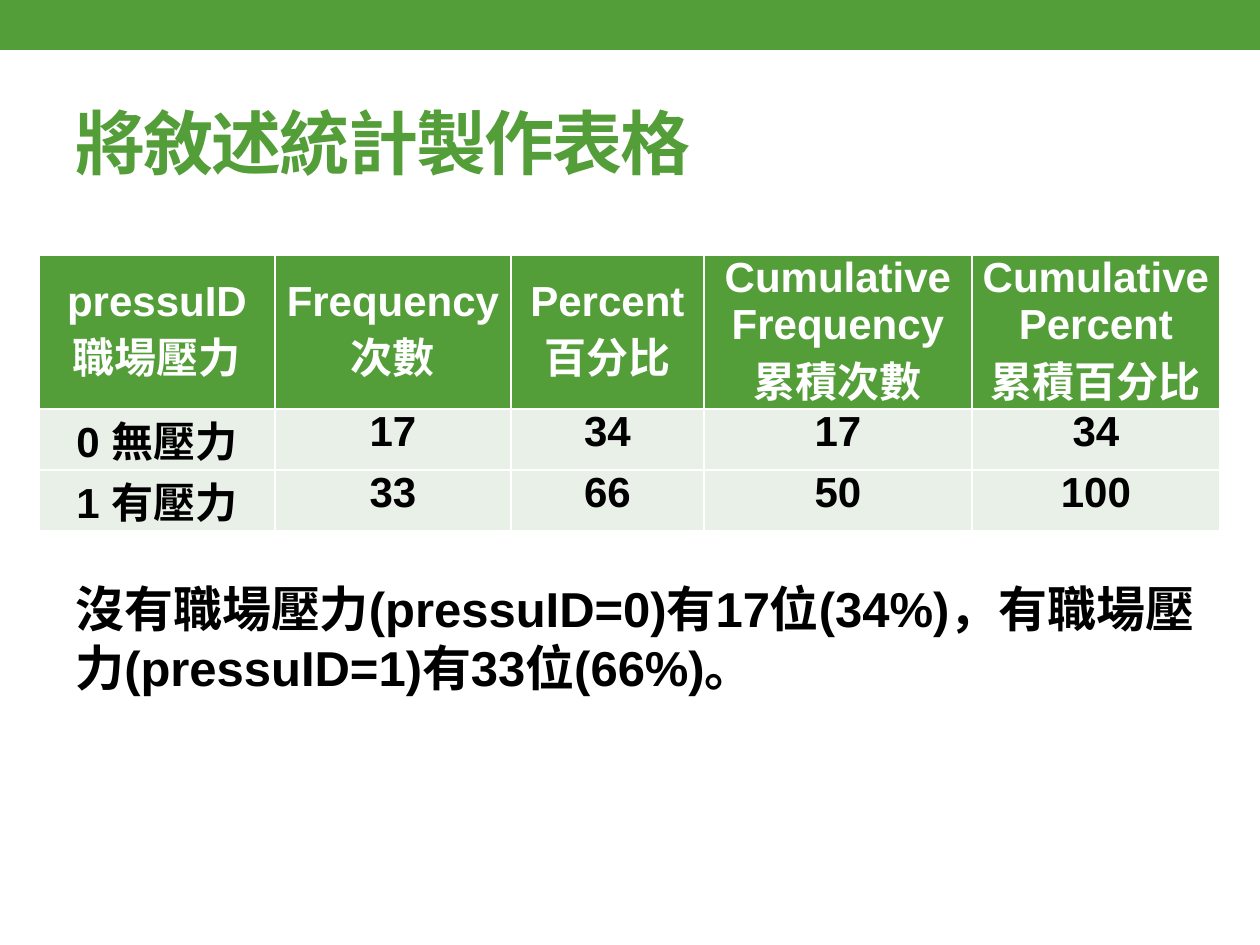
from lxml import etree
from pptx import Presentation
from pptx.dml.color import RGBColor
from pptx.enum import shapes, text
from pptx.oxml import ns
from pptx import util as u

TITLE = "將敘述統計製作表格"
HEADERS = [
    "pressuID\n職場壓力",
    "Frequency\n次數",
    "Percent\n百分比",
    "Cumulative\nFrequency\n累積次數",
    "Cumulative\nPercent\n累積百分比",
]
ROWS = [
    ["0 無壓力", "17", "34", "17", "34"],
    ["1 有壓力", "33", "66", "50", "100"],
]
SUMMARY = "沒有職場壓力(pressuID=0)有17位(34%)，有職場壓力(pressuID=1)有33位(66%)。"

COL_WIDTHS = [236, 236, 193, 268, 248]
ROW_HEIGHTS = [154, 61, 61]
GREEN = RGBColor(0x54, 0x9E, 0x39)
PALE = RGBColor(0xE9, 0xF0, 0xE8)
WHITE = RGBColor(0xFF, 0xFF, 0xFF)
BLACK = RGBColor(0, 0, 0)
LATIN, ASIAN = "Arial", "Noto Sans CJK SC"


def px(n):
    return u.Emu(n * 914400 // 126)


def write(tf, content, size, color, align=text.PP_ALIGN.LEFT, spacing=None):
    tf.text = content
    for p in tf.paragraphs:
        p.alignment = align
        for r in p.runs:
            r.font.size = u.Pt(size)
            r.font.bold = True
            r.font.name = LATIN
            r.font.color.rgb = color
            props = r._r.get_or_add_rPr()
            etree.SubElement(props, ns.qn("a:ea")).set("typeface", ASIAN)
            if spacing is not None:
                props.set("spc", str(spacing * 100))


def add_text(slide, box, content, size, color, anchor, spacing=None):
    tf = slide.shapes.add_textbox(*map(px, box)).text_frame
    tf.word_wrap = True
    tf.vertical_anchor = anchor
    write(tf, content, size, color, spacing=spacing)


def add_frequency_table(slide):
    data = [HEADERS] + ROWS
    frame = slide.shapes.add_table(
        len(data), len(HEADERS), px(39), px(255),
        px(sum(COL_WIDTHS)), px(sum(ROW_HEIGHTS)))
    table = frame.table
    for column, width in zip(table.columns, COL_WIDTHS):
        column.width = px(width)
    for i, (values, height) in enumerate(zip(data, ROW_HEIGHTS)):
        table.rows[i].height = px(height)
        for j, value in enumerate(values):
            cell = table.cell(i, j)
            cell.margin_left = cell.margin_right = u.Inches(0.02)
            cell.margin_top = cell.margin_bottom = 0
            cell.vertical_anchor = text.MSO_ANCHOR.TOP if i else text.MSO_ANCHOR.MIDDLE
            cell.fill.solid()
            cell.fill.fore_color.rgb = PALE if i else GREEN
            write(cell.text_frame, value, 24, BLACK if i else WHITE,
                  text.PP_ALIGN.CENTER)


def main():
    prs = Presentation()
    prs.slide_width, prs.slide_height = px(1260), px(945)
    s = prs.slides.add_slide(prs.slide_layouts[6])

    band = s.shapes.add_shape(shapes.MSO_SHAPE.RECTANGLE, 0, 0, px(1260), px(50))
    band.shadow.inherit = False
    band.fill.solid()
    band.fill.fore_color.rgb = GREEN
    band.line.fill.background()

    add_text(s, (63, 73, 1134, 136), TITLE, 40, GREEN, text.MSO_ANCHOR.MIDDLE, -1)
    add_frequency_table(s)
    add_text(s, (63, 572, 1147, 131), SUMMARY, 28, BLACK, text.MSO_ANCHOR.TOP)
    prs.save("out.pptx")


if __name__ == "__main__":
    main()
